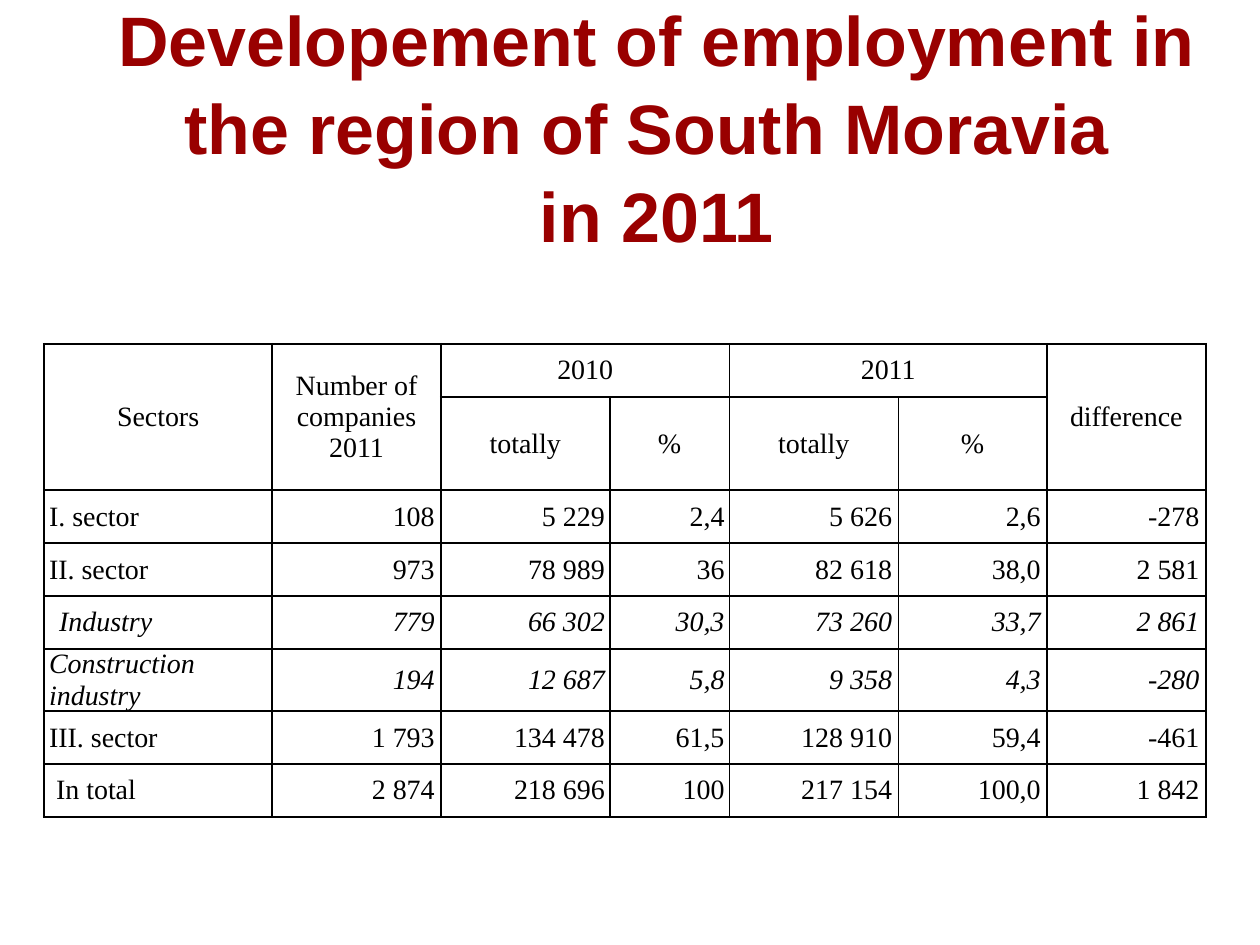
from dataclasses import dataclass

from lxml import etree
from pptx import Presentation
from pptx import util as u
from pptx.dml.color import RGBColor
from pptx.enum import text
from pptx.oxml import ns

BLACK, WHITE, DARK_RED = "000000", "FFFFFF", "990000"
COLUMN_WIDTHS = [1.81, 1.34, 1.34, 0.95, 1.34, 1.18, 1.26]
ROW_HEIGHT = 0.42
# Line widths in points, from left to right and from top to bottom
VERTICAL_LINES = [1.5, 1.5, 1.5, 1, 1, 1, 1, 1.5]
HORIZONTAL_LINES = [1.5, 1, 1.5, 1.5, 1, 1, 1.5, 1, 1.5]
WIDE_MARGIN_COLUMNS = {1, 4, 5, 6}


@dataclass
class Heading:
    label: str
    row: int
    column: int
    rows: int = 1
    columns: int = 1


@dataclass
class Sector:
    name: str
    values: list[str]
    italic: bool = False
    indent: float = 0
    space_after: float = 1
    anchor: text.MSO_ANCHOR = text.MSO_ANCHOR.MIDDLE


HEADINGS = [
    Heading("Sectors", 0, 0, rows=2),
    Heading("Number of companies 2011", 0, 1, rows=2),
    Heading("2010", 0, 2, columns=2),
    Heading("2011", 0, 4, columns=2),
    Heading("difference", 0, 6, rows=2),
    Heading("totally", 1, 2),
    Heading("%", 1, 3),
    Heading("totally", 1, 4),
    Heading("%", 1, 5),
]
SECTORS = [
    Sector("I. sector", ["108", "5 229", "2,4", "5 626", "2,6", "-278"], space_after=3),
    Sector("II. sector", ["973", "78 989", "36", "82 618", "38,0", "2 581"]),
    Sector("Industry", ["779", "66 302", "30,3", "73 260", "33,7", "2 861"],
           italic=True, indent=0.08),
    Sector("Construction industry", ["194", "12 687", "5,8", "9 358", "4,3", "-280"],
           italic=True, anchor=text.MSO_ANCHOR.BOTTOM),
    Sector("III. sector", ["1 793", "134 478", "61,5", "128 910", "59,4", "-461"],
           space_after=3),
    Sector(" In total", ["2 874", "218 696", "100", "217 154", "100,0", "1 842"]),
]


def color(value: str) -> RGBColor:
    return RGBColor.from_string(value)


def format_font(paragraph, name: str, size: float, hex_color: str,
                bold: bool = False, italic: bool = False) -> None:
    for run in paragraph.runs:
        font = run.font
        font.name, font.size = name, u.Pt(size)
        font.bold, font.italic = bold, italic
        font.color.rgb = color(hex_color)


def draw_borders(cell, row: int, column: int, rows: int, columns: int) -> None:
    widths = {
        "a:lnL": VERTICAL_LINES[column],
        "a:lnR": VERTICAL_LINES[column + columns],
        "a:lnT": HORIZONTAL_LINES[row],
        "a:lnB": HORIZONTAL_LINES[row + rows],
    }
    properties = cell._tc.get_or_add_tcPr()
    for tag, width in widths.items():
        line = etree.SubElement(properties, ns.qn(tag), w=str(u.Pt(width)))
        fill = etree.SubElement(line, ns.qn("a:solidFill"))
        etree.SubElement(fill, ns.qn("a:srgbClr"), val=BLACK)


def fill_cell(table, label: str, row: int, column: int, alignment: text.PP_ALIGN,
              rows: int = 1, columns: int = 1, margin: float = 0.04,
              italic: bool = False, space_after: float = 0):
    cell = table.cell(row, column)
    if rows > 1 or columns > 1:
        cell.merge(table.cell(row + rows - 1, column + columns - 1))
    cell.margin_left = cell.margin_right = u.Inches(margin)
    cell.margin_top = cell.margin_bottom = 0
    cell.vertical_anchor = text.MSO_ANCHOR.MIDDLE
    draw_borders(cell, row, column, rows, columns)
    cell.fill.background()

    paragraph = cell.text_frame.paragraphs[0]
    paragraph.text = label
    paragraph.alignment = alignment
    paragraph.space_after = u.Pt(space_after)
    format_font(paragraph, "Times New Roman", 16, BLACK, italic=italic)
    return cell


def draw_sector(table, row: int, sector: Sector) -> None:
    name_cell = fill_cell(table, sector.name, row, 0, text.PP_ALIGN.JUSTIFY,
                          italic=sector.italic, space_after=sector.space_after)
    name_cell.vertical_anchor = sector.anchor
    if sector.indent:
        paragraph = name_cell.text_frame.paragraphs[0]
        paragraph._p.get_or_add_pPr().set("marL", str(u.Inches(sector.indent)))

    for column, value in enumerate(sector.values, start=1):
        margin = 0.05 if column in WIDE_MARGIN_COLUMNS else 0.04
        cell = fill_cell(table, value, row, column, text.PP_ALIGN.RIGHT,
                         margin=margin, italic=sector.italic)
    # The difference column is white
    cell.fill.solid()
    cell.fill.fore_color.rgb = color(WHITE)


def draw_title(slide) -> None:
    title = slide.shapes.title
    title.left, title.top = u.Inches(0.62), u.Inches(0.36)
    title.width, title.height = u.Inches(9.18), u.Inches(1.25)
    frame = title.text_frame
    frame.text = "Developement of employment in the region of South Moravia \vin 2011"
    frame.auto_size = text.MSO_AUTO_SIZE.NONE
    frame.word_wrap = True
    frame.vertical_anchor = text.MSO_ANCHOR.MIDDLE
    paragraph = frame.paragraphs[0]
    paragraph.alignment = text.PP_ALIGN.CENTER
    paragraph.line_spacing = 1.05
    paragraph.font.size = u.Pt(40)
    format_font(paragraph, "Arial", 40, DARK_RED, bold=True)


def draw_employment_table(slide) -> None:
    row_count = 2 + len(SECTORS)
    table = slide.shapes.add_table(
        row_count, len(COLUMN_WIDTHS), u.Inches(0.35), u.Inches(2.73),
        u.Inches(sum(COLUMN_WIDTHS)), u.Inches(ROW_HEIGHT * row_count)).table
    table.first_row = table.horz_banding = False
    for column, width in zip(table.columns, COLUMN_WIDTHS):
        column.width = u.Inches(width)
    for row in table.rows:
        row.height = u.Inches(ROW_HEIGHT)

    for heading in HEADINGS:
        fill_cell(table, heading.label, heading.row, heading.column,
                  text.PP_ALIGN.CENTER, heading.rows, heading.columns, space_after=1)
    for row, sector in enumerate(SECTORS, start=2):
        draw_sector(table, row, sector)


def main() -> None:
    presentation = Presentation()
    presentation.slide_width, presentation.slide_height = u.Inches(10), u.Inches(7.5)
    slide = presentation.slides.add_slide(presentation.slide_layouts[5])
    draw_title(slide)
    draw_employment_table(slide)
    presentation.save("out.pptx")


if __name__ == "__main__":
    main()
